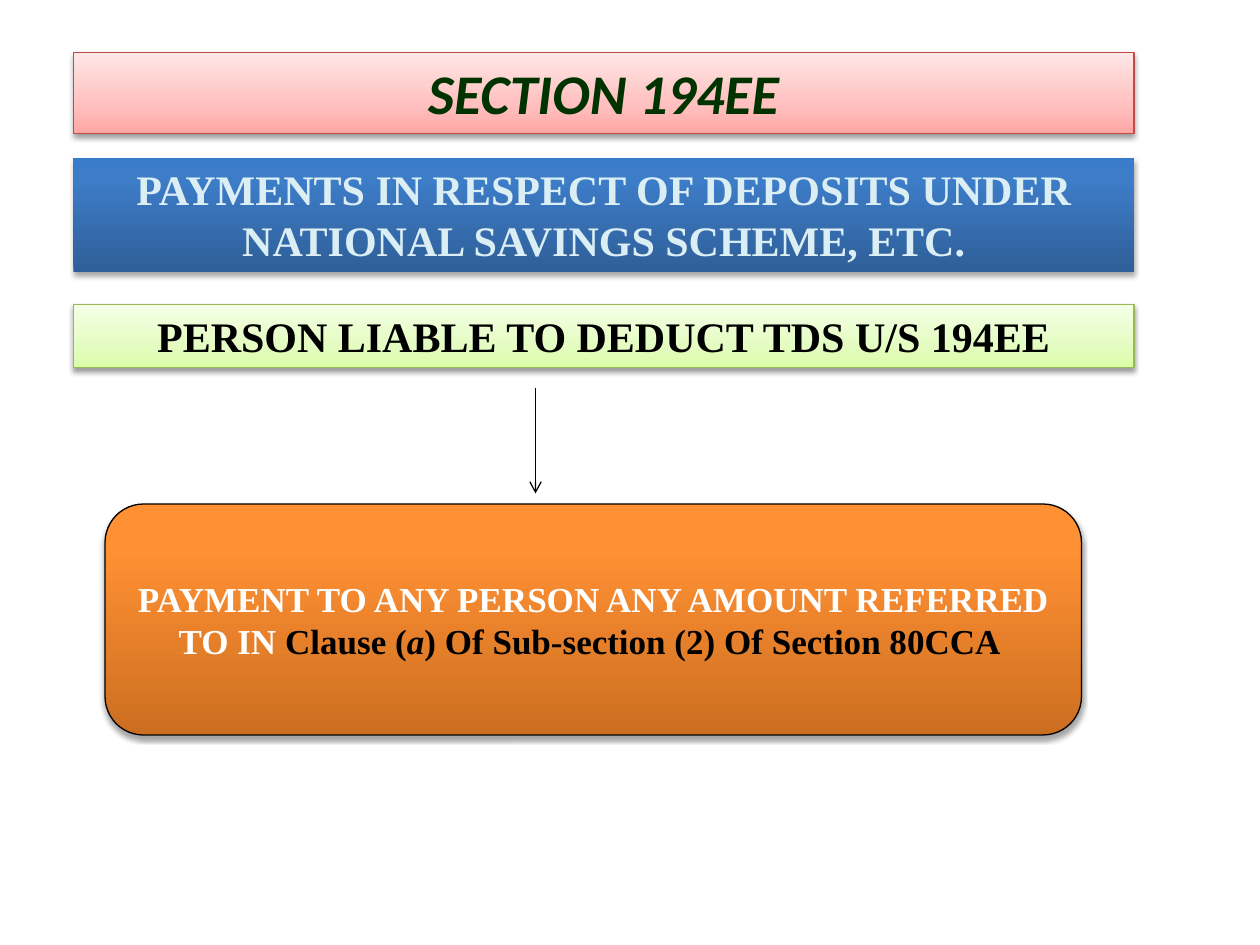
from lxml.etree import SubElement
from pptx import Presentation
from pptx.dml.color import RGBColor
from pptx.enum.shapes import MSO_CONNECTOR, MSO_SHAPE
from pptx.enum.text import MSO_ANCHOR, MSO_AUTO_SIZE, PP_ALIGN
from pptx.oxml.ns import qn
from pptx.util import Inches, Pt

COLORS = {
    "black": "000000", "white": "FFFFFF", "dark green": "003300", "ice": "DBEEF4",
    "red line": "BF4C48", "green line": "98B955",
}
# Gradient stops from the bottom edge to the top edge
GRADIENTS = {
    "red": {0: "FFA6A5", 35: "FFC0BF", 100: "FFE7E7"},
    "blue": {0: "2F5F99", 80: "3D7CC7", 100: "3A7CCB"},
    "green": {0: "DAFDA7", 35: "E4FCC2", 100: "F5FFE7"},
    "orange": {0: "CC6E20", 80: "FF9034", 100: "FF9136"},
}
SERIF = "Times New Roman"

deck = Presentation()
deck.slide_width, deck.slide_height = Inches(10), Inches(7.5)
page = deck.slides.add_slide(deck.slide_layouts[6])
CELL = deck.slide_width / 120  # grid of 120 columns by 90 rows


def grid(*counts):
    return [round(count * CELL) for count in counts]


def add_panel(kind, place, gradient, outline, shadow, font_name, size, spans):
    """Add a shaded panel; each span is (text, color, italic)."""
    box = page.shapes.add_shape(kind, *grid(*place))

    # Gradient fill
    box.fill.gradient()
    box.fill.gradient_angle = 90
    stops = box._element.spPr.find(qn("a:gradFill")).find(qn("a:gsLst"))
    for stop in list(stops):
        stops.remove(stop)
    for position, color in GRADIENTS[gradient].items():
        stop = SubElement(stops, qn("a:gs"), pos=str(position * 1000))
        SubElement(stop, qn("a:srgbClr"), val=color)

    # Outline
    if outline:
        box.line.color.rgb = RGBColor.from_string(COLORS[outline])
        box.line.width = Pt(0.75)
    else:
        box.line.fill.background()

    # Soft shadow falling downwards
    alpha, distance = shadow
    box.shadow.inherit = False
    effects = box._element.spPr.find(qn("a:effectLst"))
    outer = SubElement(effects, qn("a:outerShdw"), blurRad=str(Pt(3.1)),
                       dist=str(Pt(distance)), dir="5400000", rotWithShape="0")
    tint = SubElement(outer, qn("a:srgbClr"), val=COLORS["black"])
    SubElement(tint, qn("a:alpha"), val=str(alpha * 1000))

    # Text
    frame = box.text_frame
    frame.word_wrap = True
    para = frame.paragraphs[0]
    para.alignment = PP_ALIGN.CENTER
    for text, color, italic in spans:
        span = para.add_run()
        span.text = text
        span.font.name, span.font.size = font_name, Pt(size)
        span.font.bold, span.font.italic = True, italic
        span.font.color.rgb = RGBColor.from_string(COLORS[color])
    return box


# Heading banners: top row, height, gradient, outline, shadow, font, size, span
LIGHT, STRONG = (38, 1.6), (35, 1.8)
banners = [
    (5, 7.7, "red", "red line", LIGHT, "Calibri", 32,
     ("SECTION 194EE", "dark green", True)),
    (15, 10.9, "blue", None, STRONG, SERIF, 24,
     ("PAYMENTS IN RESPECT OF DEPOSITS UNDER NATIONAL SAVINGS SCHEME, ETC.", "ice", False)),
    (29, 6, "green", "green line", LIGHT, SERIF, 24,
     ("PERSON LIABLE TO DEDUCT TDS U/S 194EE", "black", False)),
]
for top, height, gradient, outline, shadow, font_name, size, span in banners:
    banner = add_panel(MSO_SHAPE.RECTANGLE, (7, top, 101, height), gradient, outline,
                       shadow, font_name, size, [span])
    banner.text_frame.vertical_anchor = MSO_ANCHOR.TOP
    banner.text_frame.auto_size = MSO_AUTO_SIZE.SHAPE_TO_FIT_TEXT

# Arrow down to the payment
arrow = page.shapes.add_connector(MSO_CONNECTOR.STRAIGHT, *grid(51, 37, 51, 47))
arrow.line.color.rgb = RGBColor.from_string(COLORS["black"])
arrow.line.width = Pt(0.75)
SubElement(arrow.line._get_or_add_ln(), qn("a:tailEnd"), type="arrow")
SubElement(arrow._element.spPr, qn("a:effectLst"))

# Payment panel
payment = add_panel(
    MSO_SHAPE.ROUNDED_RECTANGLE, (10, 48, 93, 22), "orange", "black", STRONG, SERIF, 20,
    [("PAYMENT TO ANY PERSON ANY AMOUNT REFERRED TO IN ", "white", False),
     ("Clause (", "black", False),
     ("a", "black", True),
     (") Of Sub-section (2) Of Section 80CCA ", "black", False)])
payment.text_frame.vertical_anchor = MSO_ANCHOR.MIDDLE

deck.save("out.pptx")
